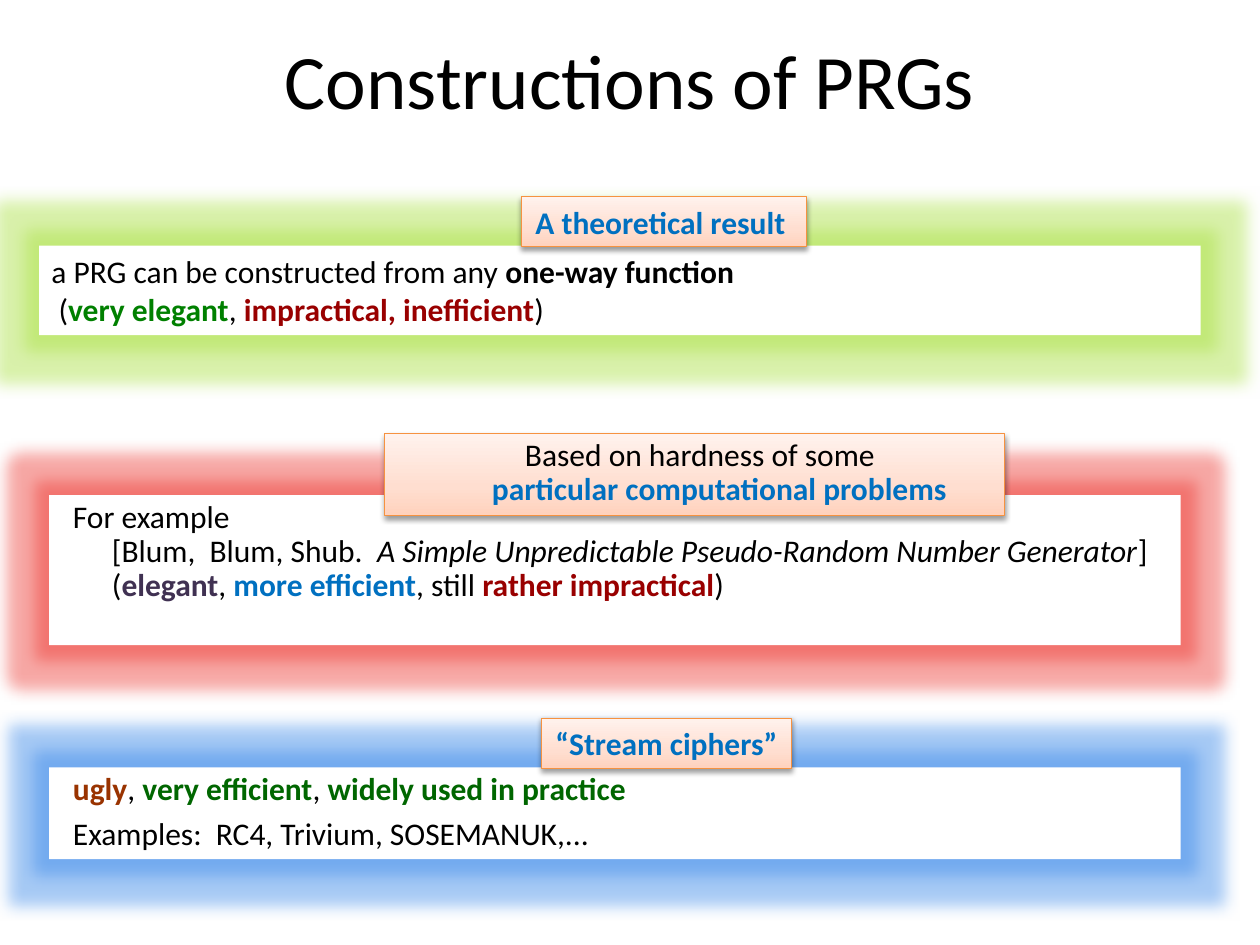
from pptx import Presentation
from pptx.dml.color import RGBColor
from pptx.enum.shapes import MSO_SHAPE
from pptx.enum.text import MSO_ANCHOR, PP_ALIGN
from pptx.oxml import parse_xml
from pptx.oxml.ns import nsdecls, qn
from pptx.util import Inches, Pt

BLACK, BLUE, RED, GREEN = "000000", "0070C0", "990000", "006600"


def color(value):
    """Return the colour for a hex string."""
    return RGBColor.from_string(value)


def add_runs(p, runs, size=18):
    """Add (text, colour, style) runs to a paragraph; None is a line break."""
    for run in runs:
        if run is None:
            p.add_line_break()
            continue
        text, value, style = run
        r = p.add_run()
        r.text = text
        r.font.name = "Calibri"
        r.font.size = Pt(size)
        r.font.bold = "b" in style
        r.font.italic = "i" in style
        r.font.color.rgb = color(value)


def fill_text(sp, paragraphs, align, hanging, wrap=True):
    """Write the paragraphs into a shape, optionally with a hanging indent."""
    tf = sp.text_frame
    tf.word_wrap = wrap
    tf.vertical_anchor = MSO_ANCHOR.TOP
    for i, runs in enumerate(paragraphs):
        p = tf.add_paragraph() if i else tf.paragraphs[0]
        p.alignment = align
        if hanging:
            p.line_spacing = 0.9
            p.space_before = Pt(6)
            pPr = p._p.get_or_add_pPr()
            pPr.set("marL", str(Inches(0.4)))
            pPr.set("indent", str(-Inches(0.31)))
        add_runs(p, runs)


def add_rect(s, x, y, w, h, effect):
    """Add a rectangle with one effect, given as XML."""
    sp = s.shapes.add_shape(MSO_SHAPE.RECTANGLE, Inches(x), Inches(y), Inches(w), Inches(h))
    sp.shadow.inherit = False
    sp._element.spPr.find(qn("a:effectLst")).append(parse_xml(effect))
    return sp


def add_panel(s, box, glow, paragraphs, hanging):
    """Add a white text panel with a coloured glow."""
    effect = (f'<a:glow {nsdecls("a")} rad="{Inches(0.25)}"><a:srgbClr val="{glow}">'
              '<a:alpha val="40000"/></a:srgbClr></a:glow>')
    sp = add_rect(s, *box, effect)
    sp.fill.solid()
    sp.fill.fore_color.rgb = color("FFFFFF")
    sp.line.fill.background()
    fill_text(sp, paragraphs, PP_ALIGN.LEFT, hanging)


def add_label(s, box, runs, hanging):
    """Add a peach gradient label with an orange border and a shadow."""
    effect = (f'<a:outerShdw {nsdecls("a")} blurRad="{Pt(3.1)}" dist="{Pt(1.6)}" dir="5400000" '
              'rotWithShape="0"><a:srgbClr val="000000"><a:alpha val="38000"/></a:srgbClr></a:outerShdw>')
    sp = add_rect(s, *box, effect)
    sp.line.color.rgb = color("F69240")
    sp.line.width = Pt(0.75)
    stops = "".join(f'<a:gs pos="{pos * 1000}"><a:srgbClr val="{value}"/></a:gs>'
                    for pos, value in ((0, "FFD2BD"), (35, "FFDED0"), (100, "FFF2ED")))
    sp._element.spPr.find(qn("a:prstGeom")).addnext(parse_xml(
        f'<a:gradFill {nsdecls("a")} rotWithShape="1"><a:gsLst>{stops}</a:gsLst>'
        '<a:lin ang="16200000" scaled="0"/></a:gradFill>'))
    fill_text(sp, [runs], PP_ALIGN.CENTER, hanging, wrap=hanging)


def add_section(s, box, glow, paragraphs, label_box, label_runs, hanging=True, label_hanging=False):
    """Add a panel and its label, placed relative to the panel's corner."""
    x, y = box[:2]
    dx, dy, w, h = label_box
    add_panel(s, box, glow, paragraphs, hanging)
    add_label(s, (x + dx, y + dy, w, h), label_runs, label_hanging)


def add_title(s, x, y, w, h, text):
    """Add the centred slide title."""
    tf = s.shapes.add_textbox(Inches(x), Inches(y), Inches(w), Inches(h)).text_frame
    tf.word_wrap = True
    tf.vertical_anchor = MSO_ANCHOR.MIDDLE
    p = tf.paragraphs[0]
    p.alignment = PP_ALIGN.CENTER
    add_runs(p, [(text, BLACK, "")], 44)


def main():
    """Build the slide and save it."""
    prs = Presentation()
    prs.slide_width, prs.slide_height = Inches(10), Inches(7.5)
    s = prs.slides.add_slide(prs.slide_layouts[6])
    add_title(s, 0.23, 0, 9.54, 1.25, "Constructions of PRGs")

    add_section(
        s, (0.31, 1.95, 9.22, 0.71), "A0DE2D",
        [[("a PRG can be constructed from any ", BLACK, ""), ("one-way function", BLACK, "b"), None,
          (" (", BLACK, ""), ("very elegant", "008000", "b"), (", ", BLACK, ""),
          ("impractical, inefficient", RED, "b"), (")", BLACK, "")]],
        (3.83, -0.39, 2.26, 0.4), [("A theoretical result ", BLUE, "b")], hanging=False)

    add_section(
        s, (0.39, 3.93, 8.98, 1.19), "EB261F",
        [[("For example", BLACK, ""), None, ("[Blum,  Blum, Shub.  ", BLACK, ""),
          ("A Simple Unpredictable Pseudo-Random Number Generator", BLACK, "i"), ("]", BLACK, ""), None,
          ("(", BLACK, ""), ("elegant", "403152", "b"), (", ", BLACK, ""),
          ("more efficient", BLUE, "b"), (", still ", BLACK, ""),
          ("rather impractical", RED, "b"), (")", BLACK, "")]],
        (2.66, -0.49, 4.92, 0.65),
        [("Based on hardness of some", BLACK, ""), None, ("particular computational problems", BLUE, "b")],
        label_hanging=True)

    add_section(
        s, (0.39, 6.09, 8.98, 0.73), "257CE7",
        [[("ugly", "993300", "b"), (", ", BLACK, ""), ("very efficient", GREEN, "b"),
          (", ", BLACK, ""), ("widely used in practice", GREEN, "b")],
         [("Examples:  RC4, Trivium, SOSEMANUK,...", BLACK, "")]],
        (3.91, -0.39, 1.98, 0.4), [("“Stream ciphers”", BLUE, "b")])

    prs.save("out.pptx")


if __name__ == "__main__":
    main()
